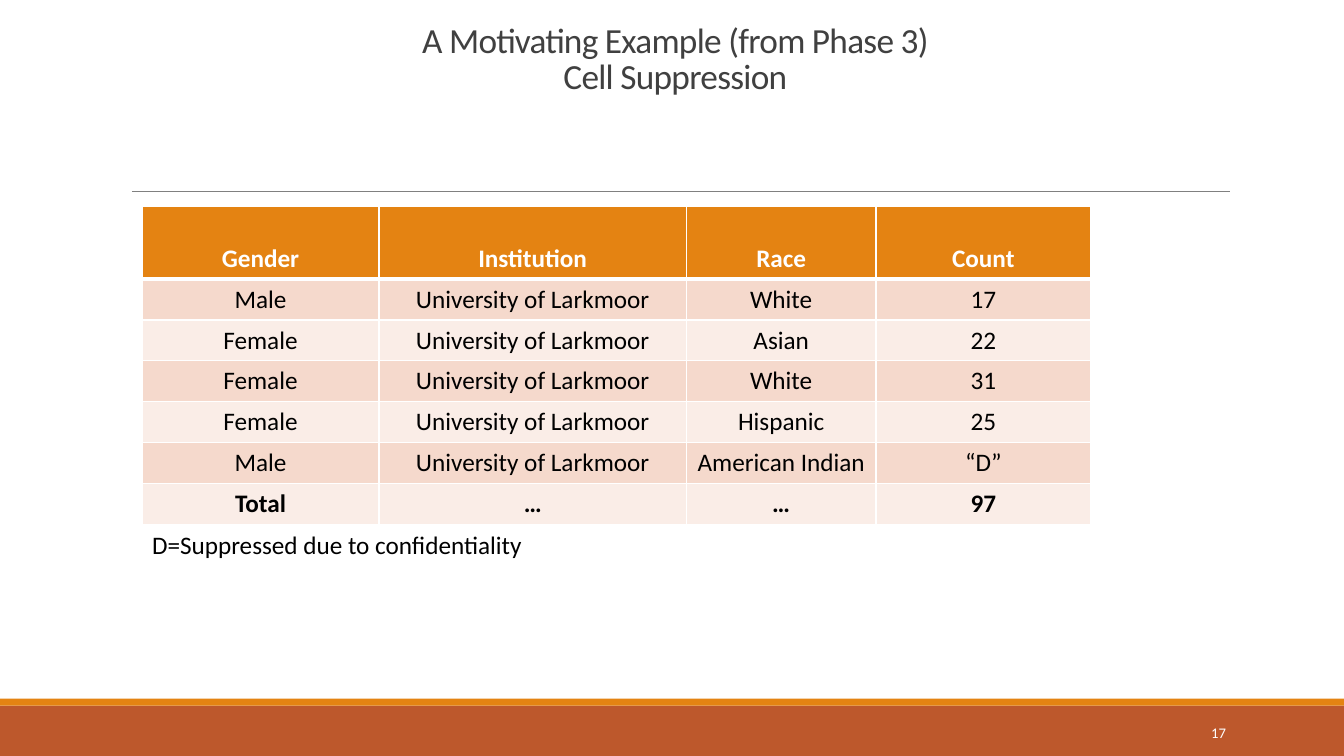
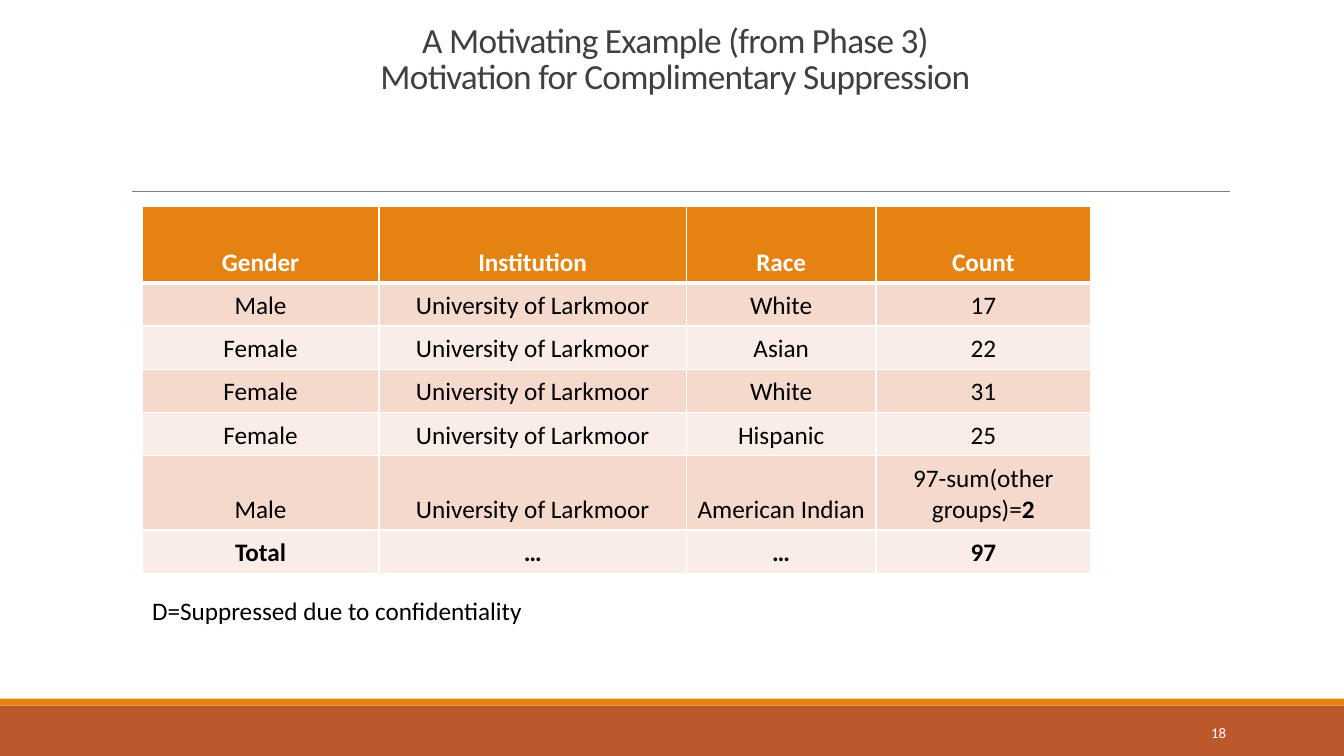
"""Build two slides on cell suppression, each with a table of counts."""
from dataclasses import dataclass
from typing import NamedTuple

from lxml import etree
from pptx import Presentation
from pptx.dml.color import RGBColor
from pptx.enum.shapes import MSO_CONNECTOR, MSO_SHAPE
from pptx.enum.text import MSO_ANCHOR, MSO_AUTO_SIZE, PP_ALIGN
from pptx.oxml.ns import qn
from pptx.presentation import Presentation as Deck
from pptx.slide import Slide
from pptx.table import _Cell as Cell
from pptx.util import Pt

RECT = MSO_SHAPE.RECTANGLE
STRAIGHT = MSO_CONNECTOR.STRAIGHT
BOTTOM, MIDDLE = MSO_ANCHOR.BOTTOM, MSO_ANCHOR.MIDDLE
LEFT, CENTER, RIGHT = PP_ALIGN.LEFT, PP_ALIGN.CENTER, PP_ALIGN.RIGHT
FIXED = MSO_AUTO_SIZE.NONE

WHITE = RGBColor(0xFF, 0xFF, 0xFF)
BLACK = RGBColor(0x00, 0x00, 0x00)
GRAY = RGBColor(0x80, 0x80, 0x80)
SLATE = RGBColor(0x40, 0x40, 0x40)
RUST = RGBColor(0xBD, 0x58, 0x2C)
ORANGE = RGBColor(0xE4, 0x83, 0x12)
PEACH = RGBColor(0xF5, 0xD9, 0xCC)
CREAM = RGBColor(0xFA, 0xED, 0xE7)

FONT = "Calibri"
WIDE, HIGH = 960, 540
TABLE_X, TABLE_Y = 101.5, 147.6
COLUMNS = (169.2, 219.6, 135.4, 153.4)
HEADS = ("Gender", "Institution", "Race", "Count")
SCHOOL = "University of Larkmoor"
TOPIC = "A Motivating Example (from Phase 3)"
NOTE = "D=Suppressed due to confidentiality"
GROUPS = (
    ("Male", SCHOOL, "White", "17"),
    ("Female", SCHOOL, "Asian", "22"),
    ("Female", SCHOOL, "White", "31"),
    ("Female", SCHOOL, "Hispanic", "25"),
)
TOTAL = ("Total", "…", "…", "97")


class Box(NamedTuple):
    """Place and size in points."""
    left: float
    top: float
    width: float
    height: float


@dataclass(frozen=True)
class Band:
    """A filled strip along the foot of the slide."""
    box: Box
    color: RGBColor


@dataclass(frozen=True)
class Page:
    """What differs from slide to slide."""
    number: int
    theme: str
    count: str
    answer: str
    heights: tuple[float, ...]
    note_top: float


BANDS = (
    Band(Box(0, 504, WIDE, 36), RUST),
    Band(Box(0, 499, WIDE, 5), ORANGE),
)
PAGES = (
    Page(17, "Cell Suppression", "“D”", "", (51.8, *[29.2] * 6), 374),
    Page(18, "Motivation for Complimentary Suppression",
         "97-sum(other groups)=", "2",
         (54.4, *[30.9] * 4, 53, 30.9), 420.8),
)


def style(part, size: float, color: RGBColor, align: PP_ALIGN,
          bold: bool = False) -> None:
    """Set the font and alignment of a paragraph."""
    part.alignment = align
    font = part.font
    font.name, font.size, font.bold = FONT, Pt(size), bold
    font.color.rgb = color


def draw_frame(slide: Slide) -> None:
    """Draw the foot bands and the rule below the title."""
    for band in BANDS:
        shape = slide.shapes.add_shape(RECT, *map(Pt, band.box))
        shape.shadow.inherit = False
        shape.fill.solid()
        shape.fill.fore_color.rgb = band.color
        shape.line.fill.background()
    rule = slide.shapes.add_connector(
        STRAIGHT, Pt(94.3), Pt(136.6), Pt(878.8), Pt(136.6))
    rule.line.color.rgb = GRAY
    rule.line.width = Pt(0.5)
    etree.SubElement(rule.element.spPr, qn("a:effectLst"))


def draw_title(slide: Slide, theme: str) -> None:
    """Fill and place the title."""
    title = slide.shapes.title
    title.left, title.top, title.width, title.height = map(
        Pt, Box(86.4, 22.8, 792, 49.7))
    frame = title.text_frame
    frame.text = f"{TOPIC}\v{theme}"
    frame.word_wrap = True
    frame.auto_size = FIXED
    frame.vertical_anchor = BOTTOM
    part = frame.paragraphs[0]
    style(part, 25.2, SLATE, CENTER)
    part.line_spacing = 0.85
    for run in part.runs:
        run.font._element.set("spc", "-50")


def draw_text(slide: Slide, box: Box, text: str, size: float,
              color: RGBColor, align: PP_ALIGN) -> None:
    """Add one line of text, centred in its height."""
    frame = slide.shapes.add_textbox(*map(Pt, box)).text_frame
    frame.word_wrap = True
    frame.vertical_anchor = MIDDLE
    frame.text = text
    style(frame.paragraphs[0], size, color, align)


def set_edge(cell: Cell, side: str, width: float) -> None:
    """Give a cell a white border on one side."""
    edge = etree.SubElement(cell._tc.get_or_add_tcPr(), qn(f"a:ln{side}"),
                            w=str(Pt(width)))
    fill = etree.SubElement(edge, qn("a:solidFill"))
    etree.SubElement(fill, qn("a:srgbClr"), val=str(WHITE))


def draw_cell(cell: Cell, text: str, row: int, bold: bool) -> None:
    """Fill and format one cell by its row."""
    head = row == 0
    cell.text = text
    cell.vertical_anchor = BOTTOM
    style(cell.text_frame.paragraphs[0], 18, WHITE if head else BLACK,
          CENTER, bold)
    for side in "LRTB":
        thick = (row, side) in ((0, "B"), (1, "T"))
        set_edge(cell, side, 3 if thick else 1)
    cell.fill.solid()
    cell.fill.fore_color.rgb = (
        ORANGE if head else PEACH if row % 2 else CREAM)


def draw_table(slide: Slide, page: Page) -> None:
    """Add the table of counts."""
    last = ("Male", SCHOOL, "American Indian", page.count)
    rows = (HEADS, *GROUPS, last, TOTAL)
    box = Box(TABLE_X, TABLE_Y, sum(COLUMNS), sum(page.heights))
    table = slide.shapes.add_table(
        len(rows), len(COLUMNS), *map(Pt, box)).table
    for column, width in zip(table.columns, COLUMNS):
        column.width = Pt(width)
    for index, (texts, height) in enumerate(zip(rows, page.heights)):
        table.rows[index].height = Pt(height)
        for place, text in enumerate(texts):
            draw_cell(table.cell(index, place), text, index,
                      texts in (HEADS, TOTAL))
    if page.answer:
        cell = table.cell(rows.index(last), len(COLUMNS) - 1)
        run = cell.text_frame.paragraphs[0].add_run()
        run.text = page.answer
        run.font.bold = True


def draw_page(deck: Deck, page: Page) -> None:
    """Add one slide."""
    slide = deck.slides.add_slide(deck.slide_layouts[5])
    draw_frame(slide)
    draw_title(slide, page.theme)
    draw_text(slide, Box(779.8, 508.8, 103, 28.8), str(page.number),
              10.5, WHITE, RIGHT)
    draw_table(slide, page)
    draw_text(slide, Box(TABLE_X, page.note_top, 362, 30), NOTE,
              18, BLACK, LEFT)


def main() -> None:
    """Build and save the deck."""
    deck = Presentation()
    deck.slide_width, deck.slide_height = Pt(WIDE), Pt(HIGH)
    for page in PAGES:
        draw_page(deck, page)
    deck.save("out.pptx")


if __name__ == "__main__":
    main()
